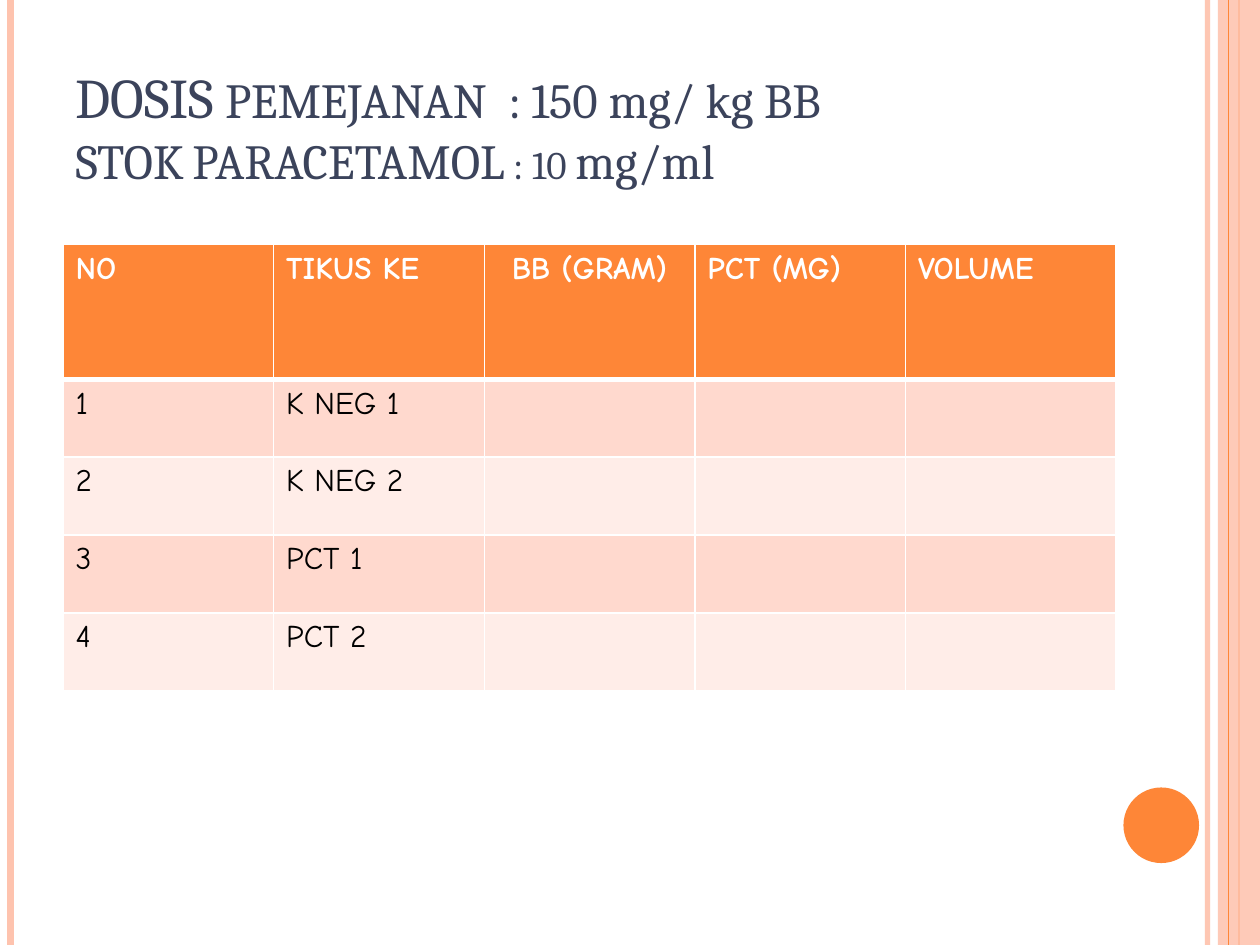
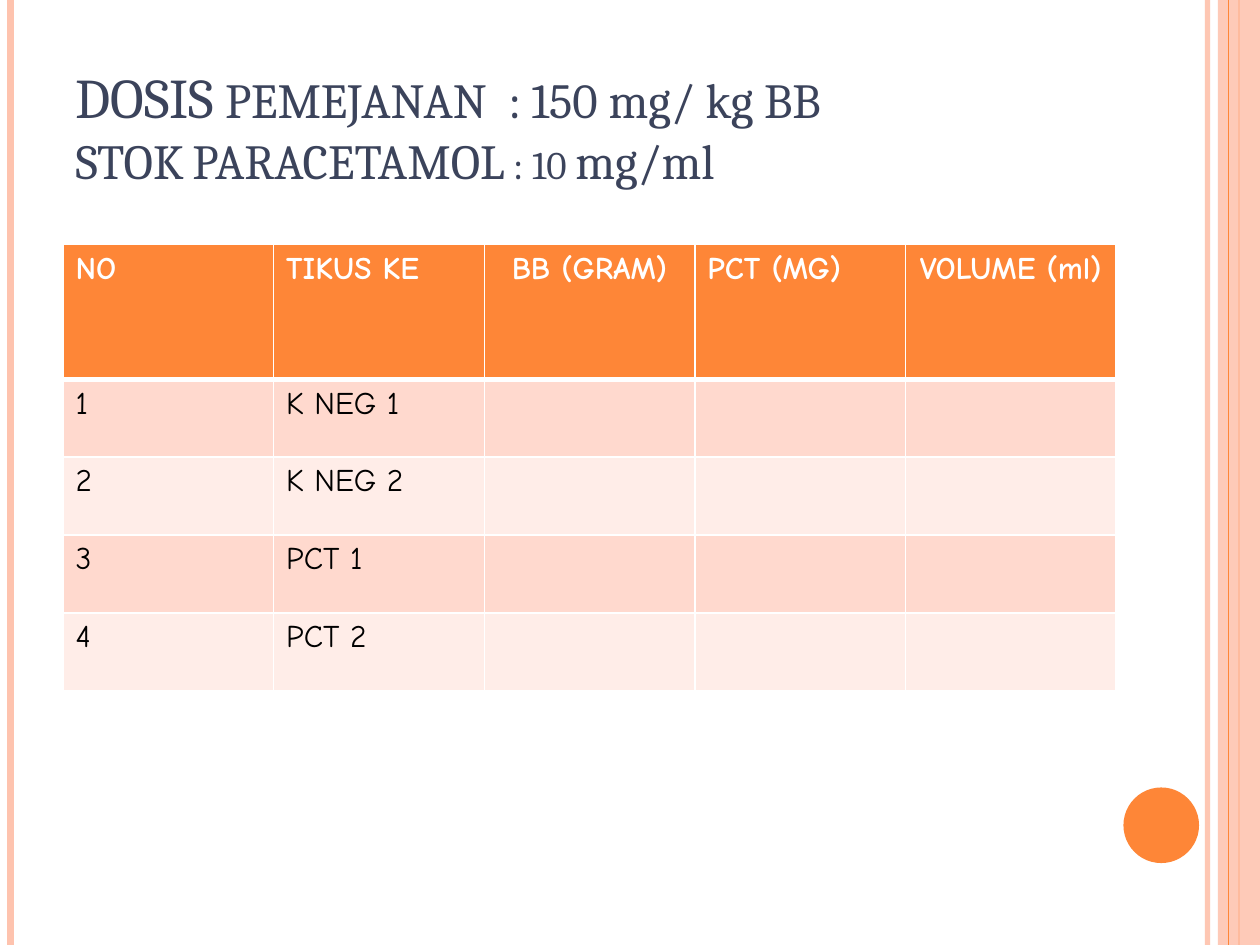
from collections import namedtuple

from lxml import etree
from pptx import Presentation, util as u
from pptx.dml.color import RGBColor
from pptx.enum import shapes, text
from pptx.oxml import ns

ORANGE = RGBColor(0xFE, 0x86, 0x37)
PEACH = RGBColor(0xFE, 0xC3, 0xAE)
ROW_DARK = RGBColor(0xFF, 0xD9, 0xCE)
ROW_LIGHT = RGBColor(0xFF, 0xED, 0xE8)
NAVY = RGBColor(0x3B, 0x43, 0x5B)
WHITE = RGBColor(0xFF, 0xFF, 0xFF)
BLACK = RGBColor(0x00, 0x00, 0x00)
TITLE_FONT, TABLE_FONT = "Cambria", "Comic Neue"

# The slide is a grid of 120 columns by 90 rows of square units
COLUMNS, ROWS = 120, 90
UNIT = u.Inches(10) // COLUMNS
Box = namedtuple("Box", "left top width height")

PAGE = Box(0, 0, COLUMNS, ROWS)
TITLE_BOX = Box(6, 3.6, 98, 15)
TABLE_BOX = Box(6, 23.3, 100.3, 42.5)
HEADER_SHARE = 0.302

# Title lines as (text, size, small capitals)
TITLE_LINES = [
    [("DOSIS", 32, False), (" PEMEJANAN  : 150 mg/ kg BB", 28, False)],
    [("STOK PARACETAMOL : 10 ", 28, True), ("mg/ml", 28, False)],
]
HEADINGS = ["NO", "TIKUS KE", "BB (GRAM)", "PCT (MG)"]
RATS = ["K NEG 1", "K NEG 2", "PCT 1", "PCT 2"]


def emu(box):
    return [round(length * UNIT) for length in box]


def set_alpha(color_format_parent, percent):
    """Make the solid colour below an element partly transparent."""
    color = color_format_parent.find(".//" + ns.qn("a:srgbClr"))
    etree.SubElement(color, ns.qn("a:alpha"), val=str(percent * 1000))


def add_rule(slide, box, column, color, weight):
    left, top, _, height = emu(box._replace(left=box.left + column))
    rule = slide.shapes.add_connector(
        shapes.MSO_CONNECTOR.STRAIGHT, left, top, left, top + height)
    rule.line.color.rgb = color
    rule.line.width = u.Pt(weight)
    etree.SubElement(rule.element.spPr, ns.qn("a:effectLst"))
    return rule


def add_solid(slide, kind, box, color):
    solid = slide.shapes.add_shape(kind, *emu(box))
    solid.shadow.inherit = False
    solid.fill.solid()
    solid.fill.fore_color.rgb = color
    solid.line.fill.background()
    return solid


def add_frame(slide, box):
    """Rules at both edges, the right band and the page-number disc."""
    inner_rule = add_rule(slide, box, 115, PEACH, 3)
    set_alpha(inner_rule.element.spPr, 93)
    add_rule(slide, box, 1, PEACH, 4.5)
    add_rule(slide, box, 118, ORANGE, 1.5)
    band = add_solid(slide, shapes.MSO_SHAPE.RECTANGLE,
                     Box(box.left + 116, box.top, 4, box.height), PEACH)
    set_alpha(band.element.spPr, 87)
    add_rule(slide, box, 117, ORANGE, 0.75)
    add_solid(slide, shapes.MSO_SHAPE.OVAL,
              Box(box.left + 107, box.top + 75, 7.2, 7.2), ORANGE)


def add_title(slide, box):
    title = slide.shapes.title
    title.left, title.top, title.width, title.height = emu(box)
    frame = title.text_frame
    frame.auto_size = text.MSO_AUTO_SIZE.NONE
    frame.vertical_anchor = text.MSO_ANCHOR.BOTTOM
    paragraph = frame.paragraphs[0]
    paragraph.alignment = text.PP_ALIGN.LEFT
    for number, line in enumerate(TITLE_LINES):
        if number:
            paragraph.add_line_break()
        for words, size, small_caps in line:
            run = paragraph.add_run()
            run.text = words
            run.font.name = TITLE_FONT
            run.font.size = u.Pt(size)
            run.font.color.rgb = NAVY
            if small_caps:
                run.font._element.set("cap", "small")
    # The line break takes the size of the text around it
    for line_break in title.element.iter(ns.qn("a:br")):
        etree.SubElement(line_break, ns.qn("a:rPr"), sz="2800")


def set_borders(cell, top, bottom):
    properties = cell._tc.get_or_add_tcPr()
    for side, weight in (("L", 1), ("R", 1), ("T", top), ("B", bottom)):
        border = etree.SubElement(properties, ns.qn(f"a:ln{side}"),
                                  w=str(u.Pt(weight)))
        fill = etree.SubElement(border, ns.qn("a:solidFill"))
        etree.SubElement(fill, ns.qn("a:srgbClr"), val=str(WHITE))


def fill_cell(cell, words, row, centred):
    is_header = row == 0
    set_borders(cell, 3 if row == 1 else 1, 3 if is_header else 1)
    cell.fill.solid()
    cell.fill.fore_color.rgb = (
        ORANGE if is_header else ROW_DARK if row % 2 else ROW_LIGHT)
    if not words:
        return
    paragraph = cell.text_frame.paragraphs[0]
    paragraph.text = words
    if centred:
        paragraph.alignment = text.PP_ALIGN.CENTER
    font = paragraph.runs[0].font
    font.name = TABLE_FONT
    font.size = u.Pt(18)
    font.bold = is_header
    font.color.rgb = WHITE if is_header else BLACK


def add_dose_table(slide, box, volume_heading, centred_headings):
    headings = HEADINGS + [volume_heading]
    records = [headings] + [[str(number), rat, "", "", ""]
                            for number, rat in enumerate(RATS, 1)]
    left, top, width, height = emu(box)
    doses = slide.shapes.add_table(
        len(records), len(headings), left, top, width, height).table
    for column in doses.columns:
        column.width = width // len(headings)
    header_height = round(height * HEADER_SHARE)
    for row, record in enumerate(records):
        doses.rows[row].height = (
            (height - header_height) // len(RATS) if row else header_height)
        for column, words in enumerate(record):
            fill_cell(doses.cell(row, column), words, row,
                      words in centred_headings)


def add_dose_slide(deck, volume_heading, centred_headings):
    slide = deck.slides.add_slide(deck.slide_layouts.get_by_name("Title Only"))
    slide.background.fill.solid()
    slide.background.fill.fore_color.rgb = WHITE
    add_frame(slide, PAGE)
    add_title(slide, TITLE_BOX)
    add_dose_table(slide, TABLE_BOX, volume_heading, centred_headings)


def main():
    deck = Presentation()
    deck.slide_width, deck.slide_height = COLUMNS * UNIT, ROWS * UNIT
    add_dose_slide(deck, "VOLUME", {"BB (GRAM)"})
    add_dose_slide(deck, "VOLUME (ml)", {"BB (GRAM)", "VOLUME (ml)"})
    deck.save("out.pptx")


if __name__ == "__main__":
    main()
